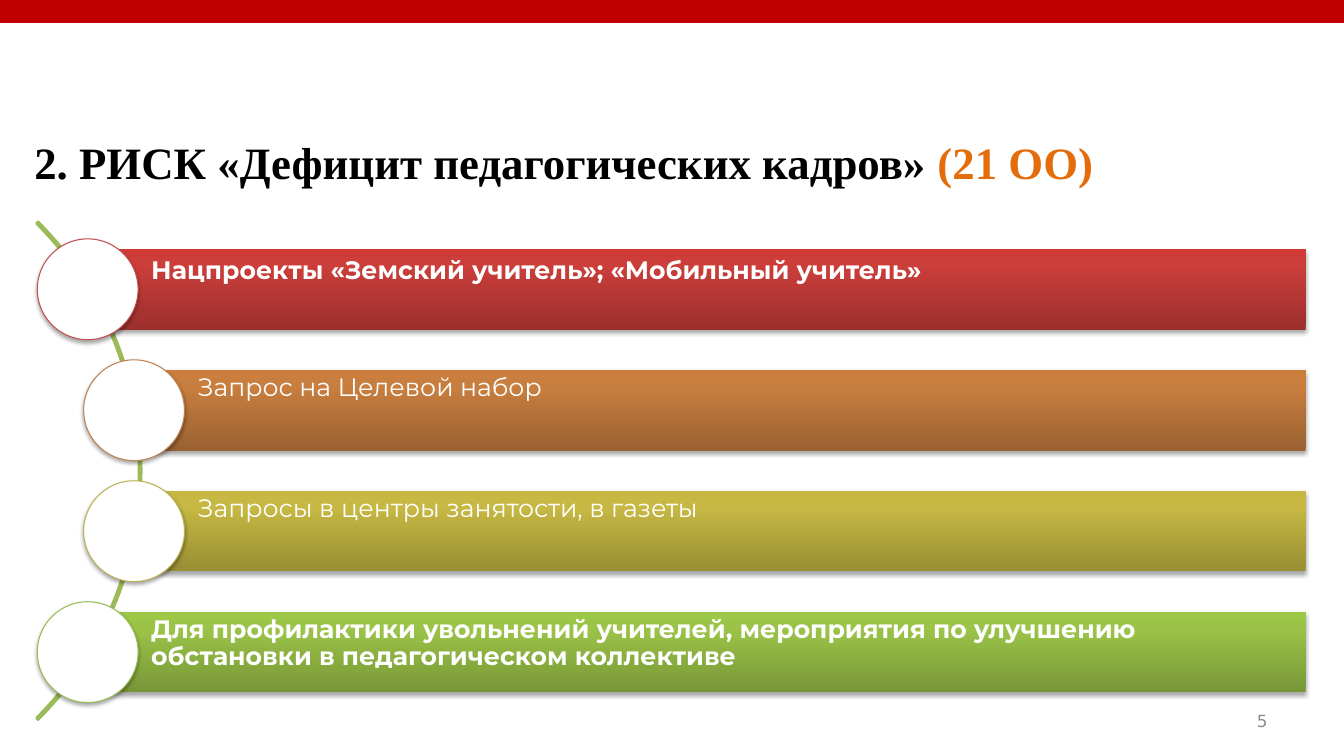
from lxml import etree
from pptx import Presentation
from pptx.dml.color import RGBColor
from pptx.enum.shapes import MSO_SHAPE
from pptx.enum.text import MSO_ANCHOR, MSO_AUTO_SIZE, PP_ALIGN
from pptx.oxml.ns import qn
from pptx.util import Inches, Pt

RECT, OVAL, ARC = MSO_SHAPE.RECTANGLE, MSO_SHAPE.OVAL, MSO_SHAPE.BLOCK_ARC
TOP, MIDDLE = MSO_ANCHOR.TOP, MSO_ANCHOR.MIDDLE
LEFT, RIGHT = PP_ALIGN.LEFT, PP_ALIGN.RIGHT
FIXED = MSO_AUTO_SIZE.NONE

WHITE = RGBColor(0xFF, 0xFF, 0xFF)
BLACK = RGBColor(0, 0, 0)
RED = RGBColor(0xC0, 0, 0)
ORANGE = RGBColor(0xE4, 0x6C, 0x0A)
GREEN = RGBColor(0x9B, 0xBB, 0x59)
GREY = RGBColor(0x8C, 0x8C, 0x8C)

WIDTH, HEIGHT = 13.33, 7.5
PITCH, BAR, DISC = 1.2, 0.8, 1.0

ROWS = [
    ("Нацпроекты «Земский учитель»; «Мобильный учитель»", True, 1.0, 0,
     RGBColor(0xC0, 0x50, 0x4D), ("9C2F2D", "CB3E3A", "CE3B37")),
    ("Запрос на Целевой набор", False, 0.9, 0.46,
     RGBColor(0xBE, 0x83, 0x51), ("9A6130", "C87E3F", "CC7E3C")),
    ("Запросы в центры занятости, в газеты", False, 0.9, 0.46,
     RGBColor(0xBD, 0xB2, 0x55), ("988E34", "C6B843", "C9BB41")),
    ("Для профилактики увольнений учителей, мероприятия по улучшению "
     "обстановки в педагогическом коллективе", True, 0.9, 0,
     GREEN, ("779737", "9BC348", "9DC746")),
]


def add(slide, kind, box, fill=None, line=None, weight=1):
    shape = slide.shapes.add_shape(kind, *map(Inches, box))
    shape.shadow.inherit = False
    if fill is None:
        shape.fill.background()
    else:
        shape.fill.solid()
        shape.fill.fore_color.rgb = fill
    if line is None:
        shape.line.fill.background()
    else:
        shape.line.color.rgb = line
        shape.line.width = Pt(weight)
    return shape


def shade(shape):
    effects = shape._element.spPr.find(qn("a:effectLst"))
    outer = etree.SubElement(effects, qn("a:outerShdw"), blurRad=str(Pt(3.1)),
                             dist=str(Pt(1.8)), dir="5400000", rotWithShape="0")
    tint = etree.SubElement(outer, qn("a:srgbClr"), val="000000")
    etree.SubElement(tint, qn("a:alpha"), val="35000")


def blend(shape, tones):
    solid = shape._element.spPr.find(qn("a:solidFill"))
    grad = etree.Element(qn("a:gradFill"), rotWithShape="1")
    stops = etree.SubElement(grad, qn("a:gsLst"))
    for place, tone in zip((0, 80000, 100000), tones):
        stop = etree.SubElement(stops, qn("a:gs"), pos=str(place))
        etree.SubElement(stop, qn("a:srgbClr"), val=tone)
    etree.SubElement(grad, qn("a:lin"), ang="16200000", scaled="0")
    solid.getparent().replace(solid, grad)


def style(para, name, size, color=None, bold=False, align=LEFT):
    para.alignment = align
    font = para.font
    font.name, font.size, font.bold = name, Pt(size), bold
    if color is not None:
        font.color.rgb = color


def add_title(slide, box):
    title = slide.shapes.title
    title.left, title.top, title.width, title.height = map(Inches, box)
    frame = title.text_frame
    frame.auto_size, frame.word_wrap = FIXED, True
    frame.vertical_anchor = MIDDLE
    para = frame.paragraphs[0]
    style(para, "Times New Roman", 32, bold=True)
    parts = (("2. РИСК «Дефицит педагогических кадров» ", BLACK),
             ("(21 ОО)", ORANGE))
    for text, color in parts:
        run = para.add_run()
        run.text = text
        run.font.color.rgb = color


def add_row(slide, box, row):
    left, top, width, height = box
    text, bold, gap, shift, edge, tones = row
    left, width = left + shift, width - shift
    start = left + DISC / 2
    bar = add(slide, RECT, (start, top + (height - BAR) / 2,
                            width - DISC / 2, BAR), WHITE)
    blend(bar, tones)
    shade(bar)
    frame = bar.text_frame
    frame.word_wrap, frame.vertical_anchor = True, TOP
    frame.margin_left = Inches(0.63)
    frame.margin_right = frame.margin_top = frame.margin_bottom = Inches(0.05)
    para = frame.paragraphs[0]
    para.text = text
    para.line_spacing = gap
    style(para, "Montserrat", 18, WHITE, bold)
    shade(add(slide, OVAL, (left, top, DISC, DISC), WHITE, edge, 0.75))


def add_list(slide, box):
    left, top, width, height = box
    size = 6.98
    middle = top + height / 2
    arc = add(slide, ARC, (left - 5.95, middle - size / 2, size, size),
              GREEN, GREEN, 2)
    for index, value in enumerate((189, 27, 0.003)):
        arc.adjustments[index] = value
    for index, row in enumerate(ROWS):
        add_row(slide, (left, top + index * PITCH, width, DISC), row)


def add_page(slide, box):
    frame = slide.shapes.add_textbox(*map(Inches, box)).text_frame
    frame.word_wrap, frame.vertical_anchor = True, MIDDLE
    para = frame.paragraphs[0]
    para.text = "5"
    style(para, "DejaVu Sans", 12, GREY, align=RIGHT)


def main():
    deck = Presentation()
    deck.slide_width, deck.slide_height = Inches(WIDTH), Inches(HEIGHT)
    slide = deck.slides.add_slide(deck.slide_layouts[5])
    add(slide, RECT, (0, 0, WIDTH, 0.21), RED, RED, 2)
    add_list(slide, (0.37, 2.37, 12.58, 3 * PITCH + DISC))
    add_title(slide, (0.24, 1.29, 12.94, 0.62))
    add_page(slide, (9.56, 6.95, 3.11, 0.4))
    deck.save("out.pptx")


if __name__ == "__main__":
    main()
